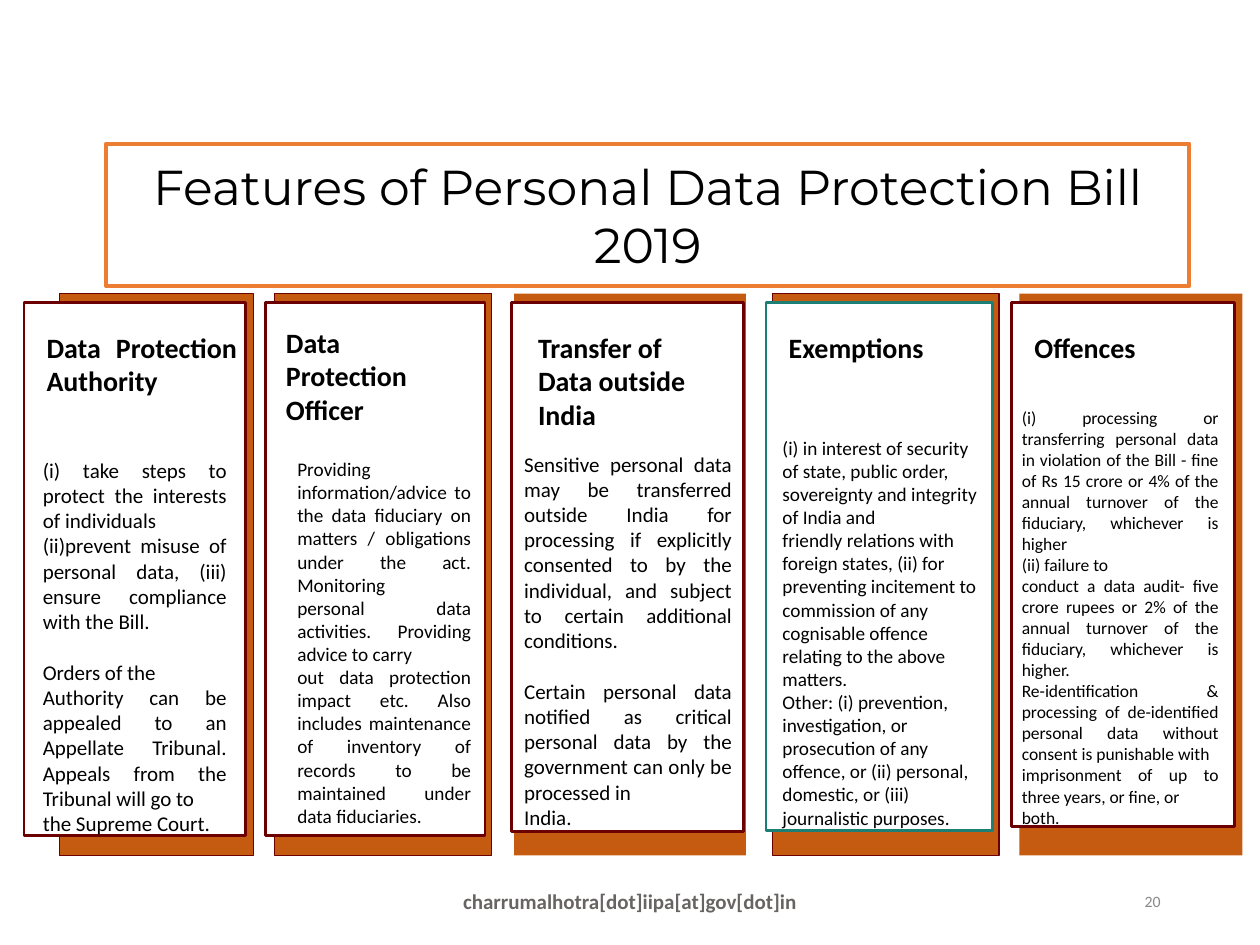
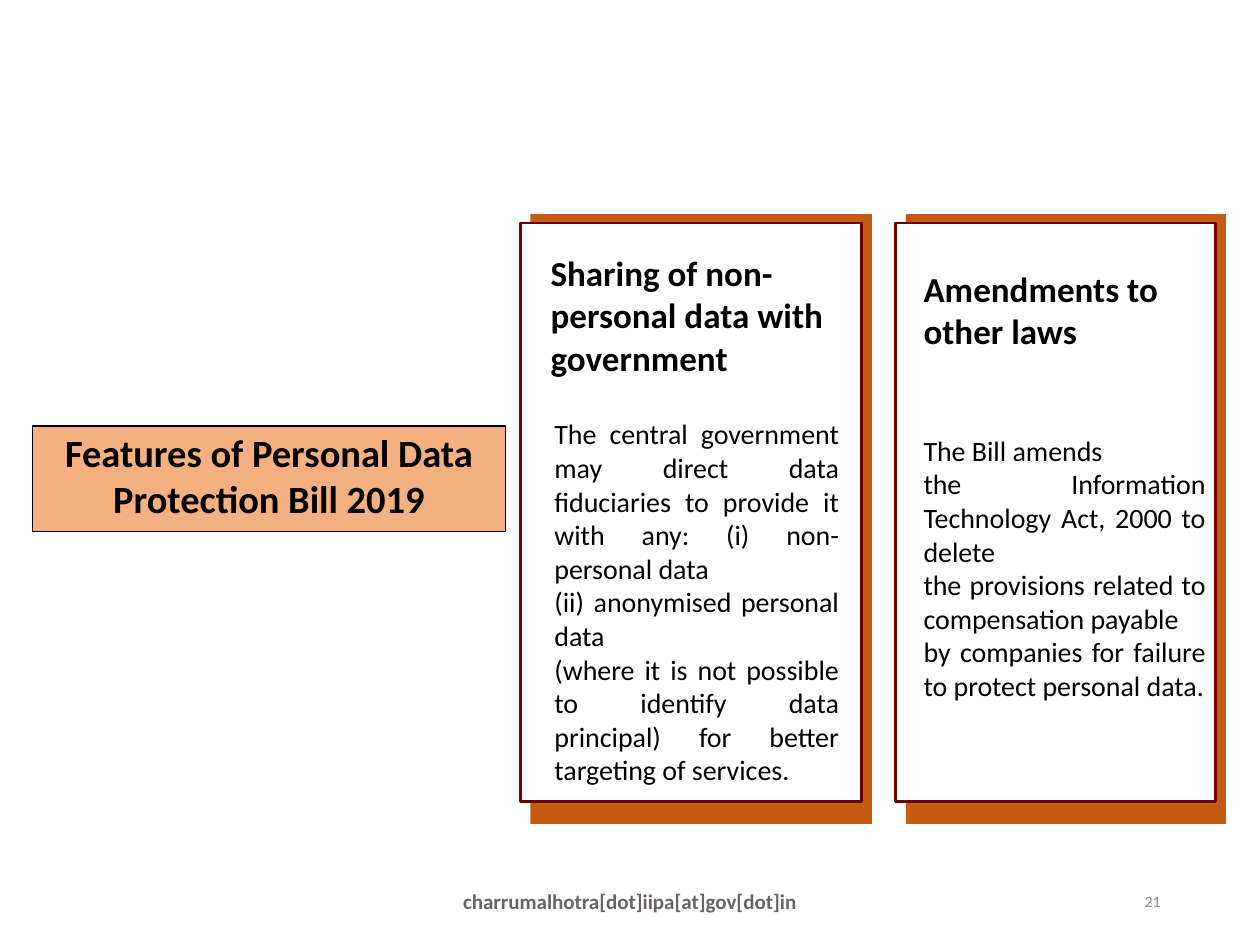
from dataclasses import dataclass

from pptx import Presentation
from pptx.dml.color import RGBColor
from pptx.enum.shapes import MSO_SHAPE
from pptx.enum.text import MSO_ANCHOR, MSO_AUTO_SIZE, PP_ALIGN
from pptx.util import Inches, Pt

# Shared style
BODY_FONT, TITLE_FONT = "Calibri", "Montserrat"
BLACK, WHITE = "000000", "FFFFFF"
RUST, MAROON, TEAL = "C55A11", "6C0000", "1D7E74"
ORANGE, PEACH = "ED7D31", "F4B081"
FOOTER_GREY, NUMBER_GREY = "696464", "888888"
LEFT, CENTER, RIGHT, JUSTIFY = (
    PP_ALIGN.LEFT, PP_ALIGN.CENTER, PP_ALIGN.RIGHT, PP_ALIGN.JUSTIFY)
CARD_INSETS = (0.08, 0.08)
FOOTER_INSETS = (0.1, 0.05)
LINE_HEIGHT = 1.22

TITLE = "Features of Personal Data Protection Bill 2019"
FOOTER = "charrumalhotra[dot]iipa[at]gov[dot]in"
FIRST_NUMBER = 20


@dataclass
class Card:
    """A white panel on a rust backing; places are left, (top,) width, height."""
    heading: list
    blocks: list            # groups of paragraphs, one blank line between groups
    back: tuple             # left, width
    front: tuple            # left, width, height
    heading_at: tuple
    body_at: tuple
    body_size: int
    body_align: PP_ALIGN = JUSTIFY
    heading_align: PP_ALIGN = LEFT
    back_line: str = None
    front_line: str = MAROON


# Content
FEATURE_CARDS = [
    Card(
        ["Data Protection Authority"],
        [["(i) take steps to protect the interests of individuals",
          "(ii)prevent misuse of personal data, (iii) ensure compliance "
          "with the Bill."],
         ["Orders of the",
          "Authority can be appealed to an Appellate Tribunal. "
          "Appeals from the Tribunal will go to",
          "the Supreme Court."]],
        back=(0.47, 1.54), front=(0.19, 1.76, 4.23),
        heading_at=(0.29, 2.54, 1.67, 0.74), body_at=(0.26, 3.55, 1.62, 3.02),
        body_size=12, heading_align=JUSTIFY, back_line=MAROON),
    Card(
        ["Data Protection Officer"],
        [["Providing",
          "information/advice to the data fiduciary on matters / obligations "
          "under the act. Monitoring",
          "personal data activities. Providing advice to carry",
          "out data protection impact etc. Also includes maintenance of "
          "inventory of records to be maintained under data fiduciaries."]],
        back=(2.18, 1.72), front=(2.11, 1.74, 4.23),
        heading_at=(2.19, 2.5, 1.54, 0.81), body_at=(2.28, 3.55, 1.54, 3),
        body_size=11, back_line=MAROON),
    Card(
        ["Transfer of Data outside India"],
        [["Sensitive personal data may be transferred outside India for "
          "processing if explicitly consented to by the individual, and "
          "subject to certain additional conditions."],
         ["Certain personal data notified as critical personal data by the "
          "government can only be processed in",
          "India."]],
        back=(4.08, 1.84), front=(4.06, 1.84, 4.2),
        heading_at=(4.19, 2.54, 1.59, 0.81), body_at=(4.08, 3.5, 1.81, 3.18),
        body_size=12),
    Card(
        ["Exemptions"],
        [["(i) in interest of security of state, public order, sovereignty "
          "and integrity of India and",
          "friendly relations with foreign states, (ii) for preventing "
          "incitement to commission of any",
          "cognisable offence relating to the above matters.",
          "Other: (i) prevention, investigation, or prosecution of any",
          "offence, or (ii) personal, domestic, or (iii) journalistic "
          "purposes."]],
        back=(6.13, 1.8), front=(6.08, 1.8, 4.19),
        heading_at=(6.18, 2.54, 1.61, 0.74), body_at=(6.13, 3.38, 1.71, 3.58),
        body_size=11, body_align=LEFT, back_line=MAROON, front_line=TEAL),
    Card(
        ["Offences"],
        [["(i) processing or transferring personal data in violation of the "
          "Bill - fine of Rs 15 crore or 4% of the annual turnover of the "
          "fiduciary, whichever is higher",
          "(ii) failure to",
          "conduct a data audit- five crore rupees or 2% of the annual "
          "turnover of the fiduciary, whichever is higher.",
          "Re-identification & processing of de-identified personal data "
          "without consent is punishable with",
          "imprisonment of up to three years, or fine, or",
          "both."]],
        back=(8.09, 1.77), front=(8.03, 1.77, 4.16),
        heading_at=(8.13, 2.54, 1.58, 0.74), body_at=(8.03, 3.15, 1.72, 3.56),
        body_size=10),
]

MORE_CARDS = [
    Card(
        ["Sharing of non-personal data with", "government"],
        [["The central government may direct data fiduciaries to provide it "
          "with any: (i) non-personal data",
          "(ii) anonymised personal data",
          "(where it is not possible to identify data principal) for better "
          "targeting of services."]],
        back=(4.21, 2.71), front=(4.13, 2.71, 4.59),
        heading_at=(4.29, 1.92, 2.42, 0.8), body_at=(4.32, 3.23, 2.42, 3.06),
        body_size=16),
    Card(
        ["Amendments to other laws"],
        [["The Bill amends",
          "the Information Technology Act, 2000 to delete",
          "the provisions related to compensation payable",
          "by companies for failure to protect personal data."]],
        back=(7.19, 2.54), front=(7.11, 2.54, 4.59),
        heading_at=(7.25, 2.04, 2.27, 0.88), body_at=(7.25, 3.36, 2.4, 2.82),
        body_size=16),
]

PAGES = [
    dict(title=dict(at=(0.84, 1.14, 8.6, 1.13), font=TITLE_FONT, size=28,
                    bold=False, anchor=MSO_ANCHOR.MIDDLE,
                    fill=None, line=ORANGE, line_width=2.25),
         cards=FEATURE_CARDS, top=2.33, back_height=4.46, heading_size=16),
    dict(title=dict(at=(0.26, 3.38, 3.75, 0.84), font=BODY_FONT, size=22,
                    bold=True, anchor=MSO_ANCHOR.BOTTOM,
                    fill=PEACH, line=BLACK, line_width=0.75),
         cards=MORE_CARDS, top=1.7, back_height=4.84, heading_size=20),
]
FRONT_DROP = 0.07


# Helpers
def color(code):
    return RGBColor.from_string(code)


def inches(at):
    return [Inches(length) for length in at]


def paint(shape, fill, line, width):
    if fill:
        shape.fill.solid()
        shape.fill.fore_color.rgb = color(fill)
    else:
        shape.fill.background()
    if line:
        shape.line.color.rgb = color(line)
        shape.line.width = Pt(width)
    else:
        shape.line.fill.background()


def write(box, blocks, size, align=LEFT, bold=False, code=BLACK,
          font=BODY_FONT, anchor=MSO_ANCHOR.TOP, insets=CARD_INSETS):
    frame = box.text_frame
    frame.word_wrap = True
    frame.auto_size = MSO_AUTO_SIZE.NONE
    frame.vertical_anchor = anchor
    frame.margin_left = frame.margin_right = Inches(insets[0])
    frame.margin_top = frame.margin_bottom = Inches(insets[1])
    para = frame.paragraphs[0]
    for block_index, block in enumerate(blocks):
        for index, text in enumerate(block):
            if block_index or index:
                para = frame.add_paragraph()
            para.text = text
            para.alignment = align
            if block_index and index == 0:
                para.space_before = Pt(round(size * LINE_HEIGHT, 1))
            para.font.name = font
            para.font.size = Pt(size)
            para.font.bold = bold
            para.font.color.rgb = color(code)


def add_text(shapes, at, blocks, size, **style):
    write(shapes.add_textbox(*inches(at)), blocks, size, **style)


def add_panel(shapes, at, fill, line, width):
    panel = shapes.add_shape(MSO_SHAPE.RECTANGLE, *inches(at))
    panel.shadow.inherit = False
    paint(panel, fill, line, width)


def add_card(page, card, top, back_height, heading_size):
    shapes = page.shapes.add_group_shape().shapes
    back_left, back_width = card.back
    front_left, front_width, front_height = card.front
    add_panel(shapes, (back_left, top, back_width, back_height),
              RUST, card.back_line, 0.75)
    add_panel(shapes, (front_left, top + FRONT_DROP, front_width, front_height),
              WHITE, card.front_line, 1.5)
    add_text(shapes, card.body_at, card.blocks, card.body_size,
             align=card.body_align)
    add_text(shapes, card.heading_at, [card.heading], heading_size,
             align=card.heading_align, bold=True)


def add_title(page, at, fill, line, line_width, **style):
    title = page.shapes.title
    title.left, title.top, title.width, title.height = inches(at)
    paint(title, fill, line, line_width)
    write(title, [[TITLE]], align=CENTER, **style)


def add_footer(page, number):
    shared = dict(anchor=MSO_ANCHOR.MIDDLE, insets=FOOTER_INSETS)
    add_text(page.shapes, (3.31, 6.95, 3.38, 0.4), [[FOOTER]], 12,
             align=CENTER, bold=True, code=FOOTER_GREY, **shared)
    add_text(page.shapes, (7.06, 6.95, 2.25, 0.4), [[str(number)]], 9,
             align=RIGHT, code=NUMBER_GREY, **shared)


def main():
    deck = Presentation()
    deck.slide_width, deck.slide_height = Inches(10), Inches(7.5)
    title_only = deck.slide_layouts[5]
    for number, content in enumerate(PAGES, FIRST_NUMBER):
        page = deck.slides.add_slide(title_only)
        add_footer(page, number)
        add_title(page, **content["title"])
        for card in content["cards"]:
            add_card(page, card, content["top"], content["back_height"],
                     content["heading_size"])
    deck.save("out.pptx")


if __name__ == "__main__":
    main()
